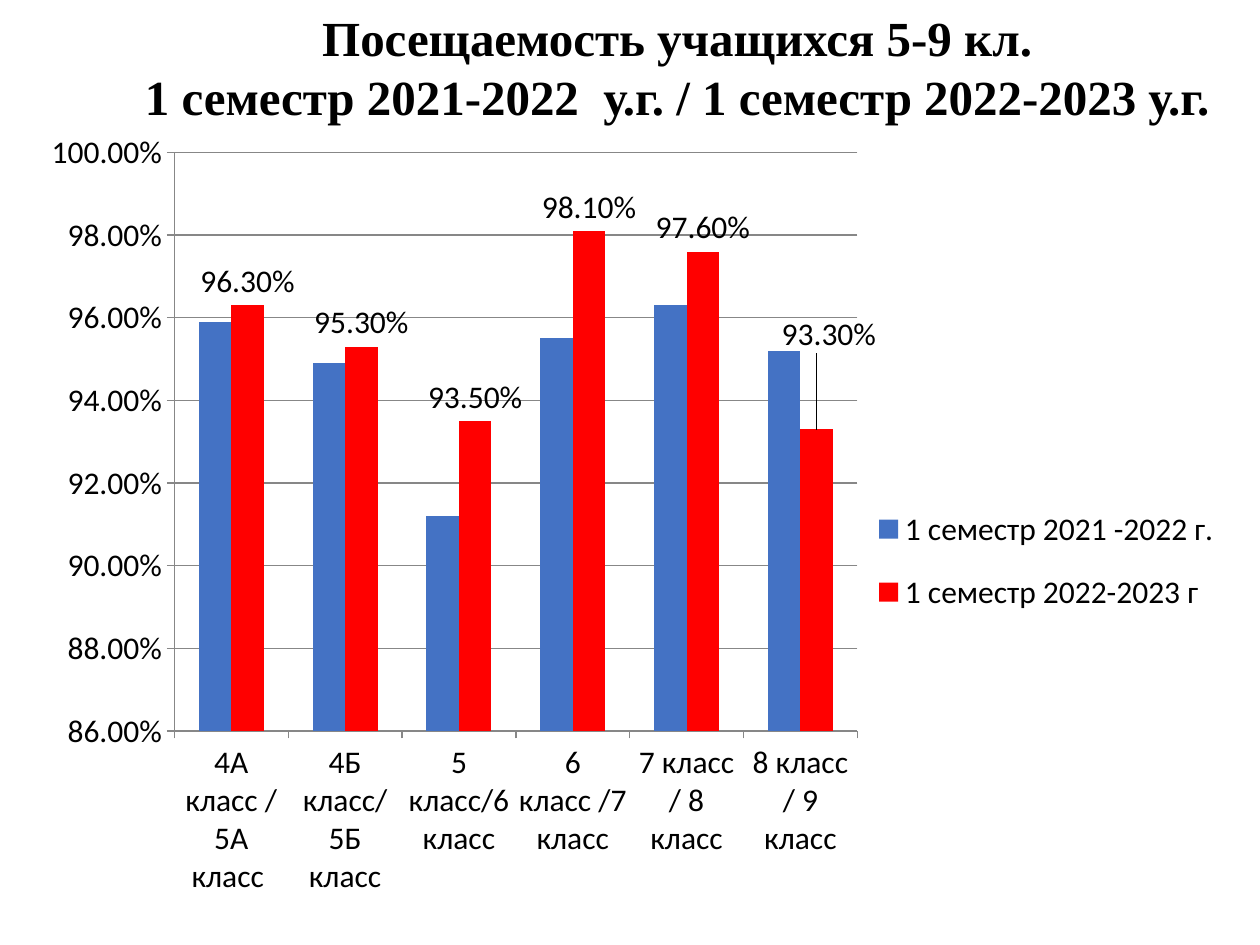
"""Build a slide comparing class attendance in two first semesters."""
import pptx
import pptx.chart.data
import pptx.dml.color
import pptx.enum.chart
import pptx.enum.text
import pptx.oxml
import pptx.oxml.ns
import pptx.util

Pt = pptx.util.Pt
Color = pptx.dml.color.RGBColor.from_string

THEME = {
    "text": Color("000000"),
    "grid": Color("878787"),
    "series": [Color("4472C4"), Color("FF0000")],
    "title_font": "Times New Roman",
    "title_size": Pt(28),
    "chart_font": "Calibri",
    "chart_size": Pt(18),
}
PERCENT = "0.00%"
TITLE = [
    "Посещаемость учащихся 5-9 кл.",
    "1 семестр 2021-2022  у.г. / 1 семестр 2022-2023 у.г.",
]
CLASSES = [
    "4А класс /5А класс ",
    "4Б класс/5Б класс",
    "5 класс/6 класс",
    "6 класс /7 класс",
    "7 класс / 8 класс",
    "8 класс / 9 класс",
]
ATTENDANCE = {
    "1 семестр 2021 -2022 г.": [0.959, 0.949, 0.912, 0.955, 0.963, 0.952],
    "1 семестр 2022-2023 г": [0.963, 0.953, 0.935, 0.981, 0.976, 0.933],
}


def set_layout(parent, index, **settings):
    """Give a chart part a manual layout in fractions of the chart."""
    for old in parent.xpath("c:layout"):
        parent.remove(old)
    entries = "".join(f'<c:{key} val="{value}"/>' for key, value in settings.items())
    parent.insert(index, pptx.oxml.parse_xml(
        f'<c:layout {pptx.oxml.ns.nsdecls("c")}>'
        f"<c:manualLayout>{entries}</c:manualLayout></c:layout>"
    ))


deck = pptx.Presentation()
deck.slide_width, deck.slide_height = Pt(720), Pt(540)
page = deck.slides.add_slide(deck.slide_layouts[6])

data = pptx.chart.data.CategoryChartData(number_format=PERCENT)
data.categories = CLASSES
for name, values in ATTENDANCE.items():
    data.add_series(name, values)
chart = page.shapes.add_chart(
    pptx.enum.chart.XL_CHART_TYPE.COLUMN_CLUSTERED,
    Pt(16), Pt(69), Pt(697), Pt(453), data,
).chart
chart.has_title = False
chart.font.name = THEME["chart_font"]
chart.font.size = THEME["chart_size"]
chart.font.color.rgb = THEME["text"]

plot = chart.plots[0]
plot.gap_width = 150
plot.overlap = 0
plot.vary_by_categories = False
for series, color in zip(plot.series, THEME["series"]):
    series.format.fill.solid()
    series.format.fill.fore_color.rgb = color

labels = plot.series[1].data_labels
labels.show_value = True
labels.number_format = PERCENT
labels.number_format_is_linked = False
labels.position = pptx.enum.chart.XL_LABEL_POSITION.OUTSIDE_END
last_label = plot.series[1].points[5].data_label
last_label.position = pptx.enum.chart.XL_LABEL_POSITION.OUTSIDE_END
set_layout(chart.element.xpath(".//c:dLbl")[0], 1, x=0.01, y=-0.09)

scale = chart.value_axis
scale.minimum_scale, scale.maximum_scale, scale.major_unit = 0.86, 1, 0.02
scale.has_major_gridlines = True
scale.major_gridlines.format.line.color.rgb = THEME["grid"]
scale.major_gridlines.format.line.width = Pt(0.75)
scale.tick_labels.number_format = PERCENT
scale.tick_labels.number_format_is_linked = False
for axis in (scale, chart.category_axis):
    axis.major_tick_mark = pptx.enum.chart.XL_TICK_MARK.OUTSIDE
    axis.format.line.color.rgb = THEME["grid"]
    axis.format.line.width = Pt(0.75)

chart.has_legend = True
chart.legend.position = pptx.enum.chart.XL_LEGEND_POSITION.RIGHT
chart.legend.include_in_layout = False
set_layout(chart.element.xpath("c:chart/c:legend")[0], 1,
           xMode="edge", yMode="edge", x=0.68, y=0.46, w=0.31, h=0.19)
set_layout(chart.element.xpath("c:chart/c:plotArea")[0], 0,
           layoutTarget="inner", xMode="edge", yMode="edge",
           x=0.12, y=0.04, w=0.56, h=0.73)

box = page.shapes.add_textbox(Pt(70), Pt(1), Pt(634), Pt(75))
box.text_frame.word_wrap = True
box.text_frame.text = "\n".join(TITLE)
for para in box.text_frame.paragraphs:
    para.alignment = pptx.enum.text.PP_ALIGN.CENTER
    for span in para.runs:
        span.font.name = THEME["title_font"]
        span.font.size = THEME["title_size"]
        span.font.bold = True
        span.font.color.rgb = THEME["text"]

deck.save("out.pptx")
